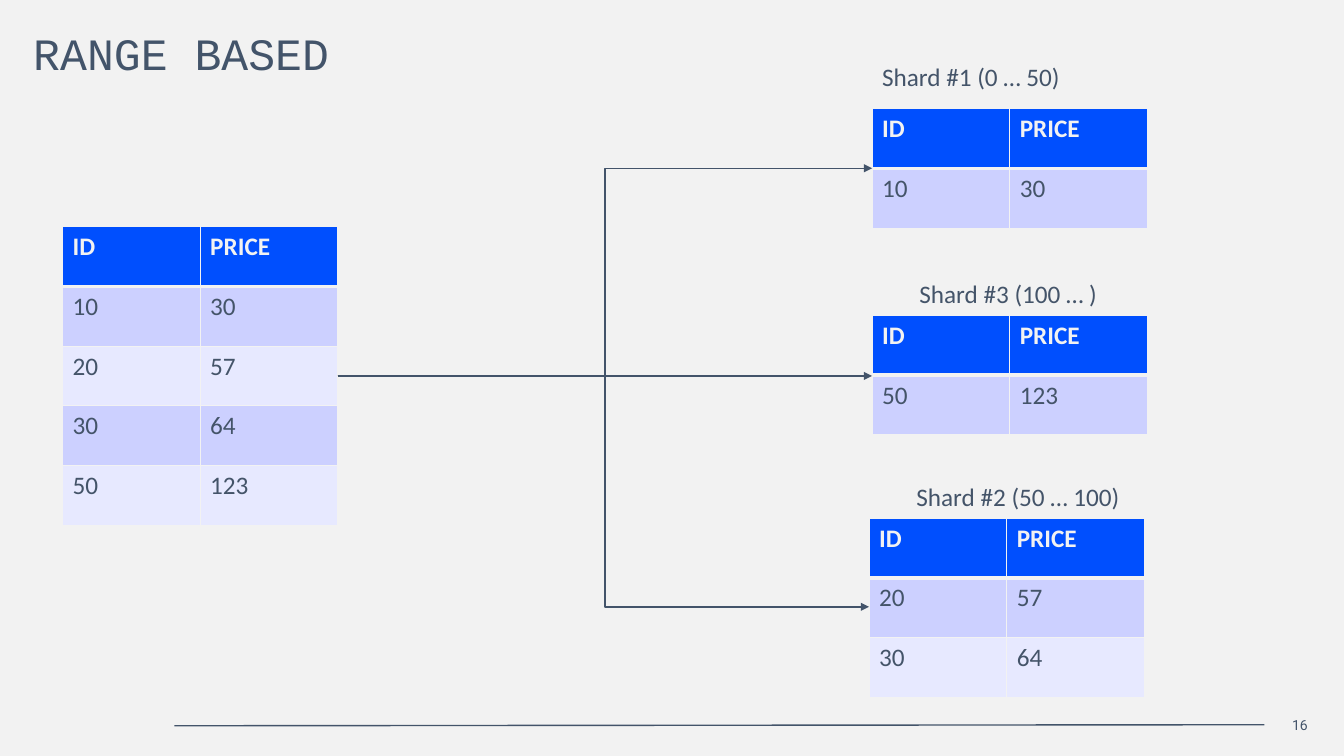
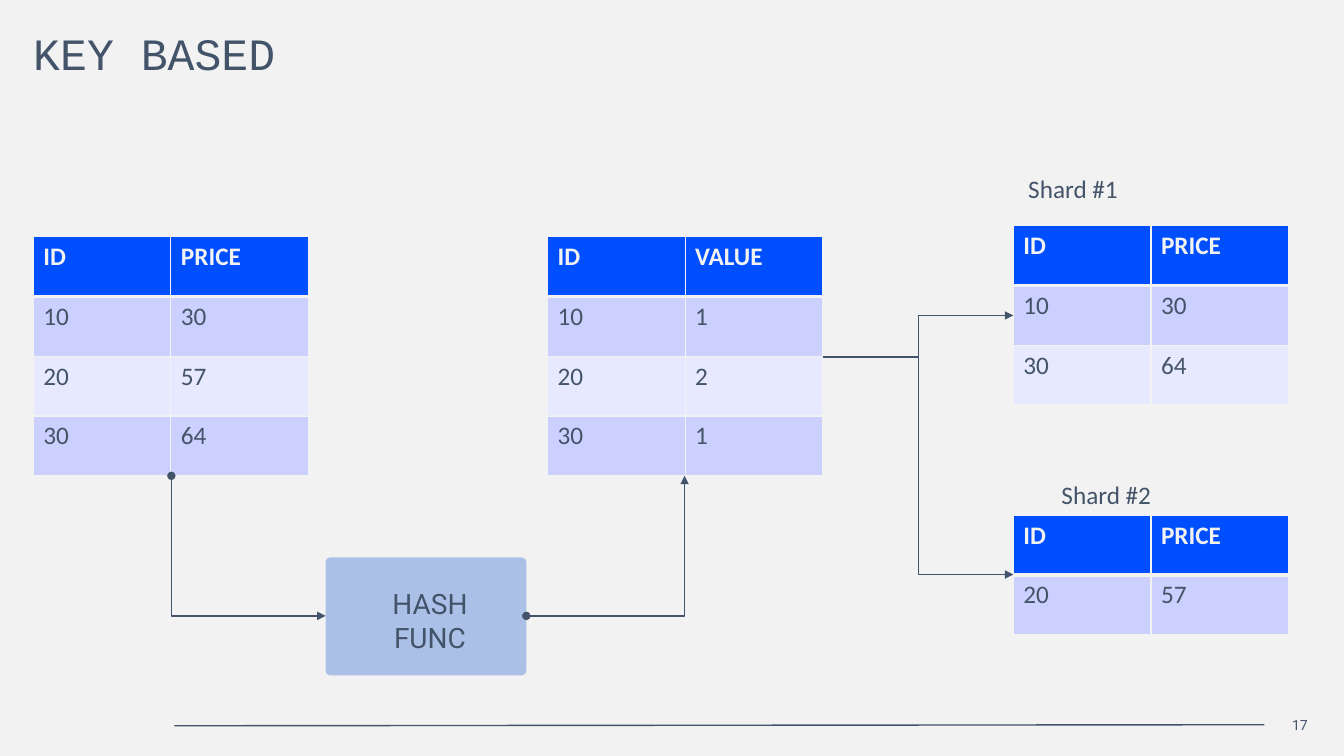
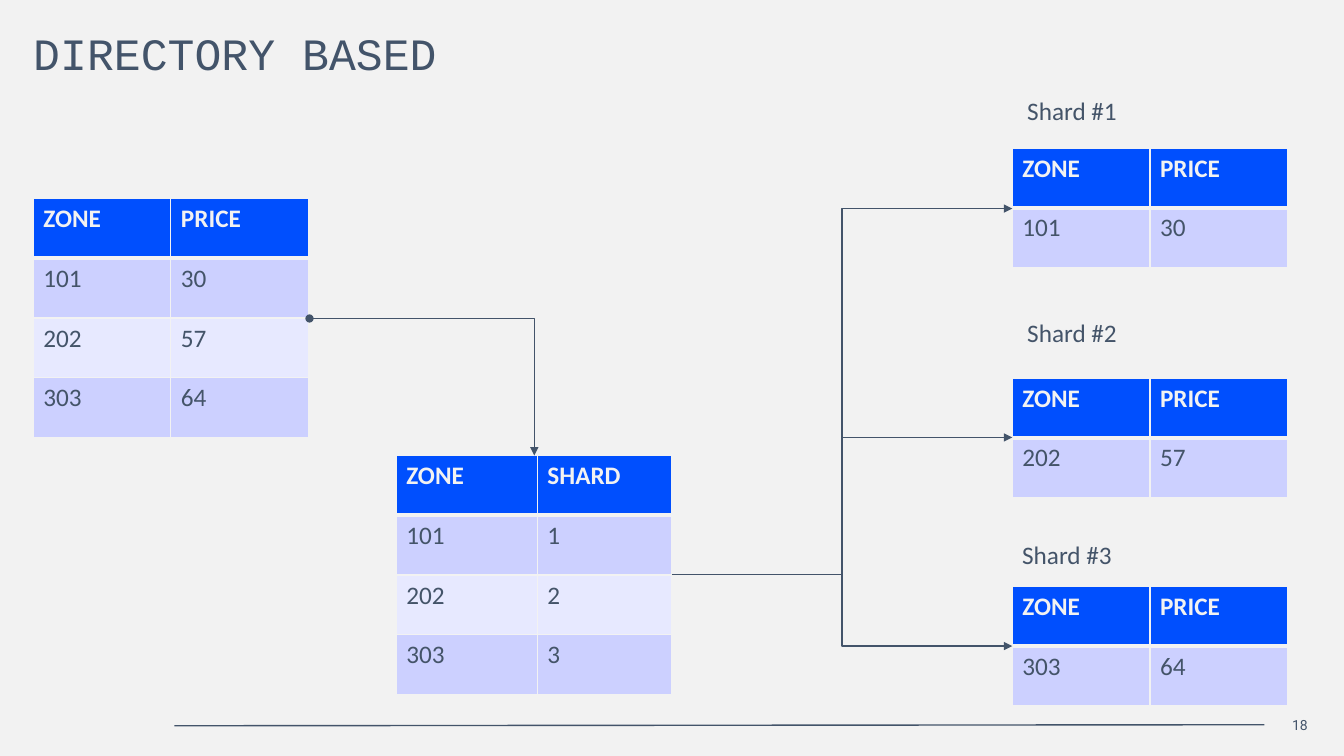
from lxml import etree
from pptx import Presentation
from pptx.dml.color import RGBColor
from pptx.enum.shapes import MSO_CONNECTOR as LINK, MSO_SHAPE
from pptx.enum.text import MSO_ANCHOR as ANCHOR, MSO_AUTO_SIZE as FIT, PP_ALIGN as ALIGN
from pptx.oxml.ns import qn
from pptx.util import Inches, Pt

PAPER, INK, BODY_INK = "F2F2F2", "43546A", "445469"
HEADER, BANDS, BOX_FILL = "004FFE", ("CCD0FF", "E7E9FF"), "AAC0E6"
MONO, SANS, TABLE_FONT = "Courier New", "Roboto", "Calibri"
TABLE_WIDTH, ROW_HEIGHT = 2.73, 2.37 / 4


def color(hex_text):
    return RGBColor.from_string(hex_text)


def set_border(cell, side, points):
    props = cell._tc.get_or_add_tcPr()
    line = etree.SubElement(props, qn("a:ln" + side), w=str(Pt(points)))
    fill = etree.SubElement(line, qn("a:solidFill"))
    etree.SubElement(fill, qn("a:srgbClr"), val=PAPER)


class ShardDeck:
    """Holds the style and the current slide."""

    def __init__(self):
        self.deck = Presentation()
        self.deck.slide_width, self.deck.slide_height = Inches(13.33), Inches(7.5)
        self.page = None

    def start_page(self, title, number):
        self.page = self.deck.slides.add_slide(self.deck.slide_layouts[6])
        fill = self.page.background.fill
        fill.solid()
        fill.fore_color.rgb = color(PAPER)
        self.text(str(number), 12.54, 7.1, 0.43, 0.19, SANS, 10,
                  align=ALIGN.RIGHT, anchor=ANCHOR.MIDDLE)
        self.connector(LINK.STRAIGHT, (1.73, 7.2), (12.54, 7.19))
        self.text(title, 0.33, 0.26, 10.53, 0.54, MONO, 32, after=6)

    def add_text(self, frame, text, font, size, ink=INK, bold=False, align=None, after=None):
        para = frame.paragraphs[0]
        para.alignment = align
        if after:
            para.space_after = Pt(after)
        span = para.add_run()
        span.text = text
        span.font.name, span.font.size, span.font.bold = font, Pt(size), bold
        span.font.color.rgb = color(ink)

    def set_insets(self, frame, left=0, top=0, right=0, bottom=0):
        frame.margin_left, frame.margin_top = Inches(left), Inches(top)
        frame.margin_right, frame.margin_bottom = Inches(right), Inches(bottom)

    def text(self, text, left, top, width, height, font, size,
             anchor=ANCHOR.TOP, **style):
        box = self.page.shapes.add_textbox(*map(Inches, (left, top, width, height)))
        frame = box.text_frame
        frame.word_wrap = True
        frame.vertical_anchor = anchor
        self.set_insets(frame)
        self.add_text(frame, text, font, size, **style)

    def label(self, text, left, top, width=1.1):
        box = self.page.shapes.add_textbox(*map(Inches, (left, top, width, 0.4)))
        frame = box.text_frame
        frame.word_wrap = False
        frame.auto_size = FIT.SHAPE_TO_FIT_TEXT
        self.add_text(frame, text, TABLE_FONT, 18, BODY_INK)

    def table(self, left, top, header, *records, widths=(TABLE_WIDTH / 2,) * 2):
        rows = [header, *records]
        height = ROW_HEIGHT * len(rows)
        table = self.page.shapes.add_table(
            len(rows), len(header), *map(Inches, (left, top, TABLE_WIDTH, height))).table
        for column, width in zip(table.columns, widths):
            column.width = Inches(width)
        for r, values in enumerate(rows):
            table.rows[r].height = Inches(ROW_HEIGHT)
            for c, value in enumerate(values):
                self.fill_cell(table.cell(r, c), r, value)

    def fill_cell(self, cell, row, value):
        is_header = row == 0
        edges = {"L": 1, "R": 1, "T": 3 if row == 1 else 1, "B": 3 if is_header else 1}
        for side, points in edges.items():
            set_border(cell, side, points)
        cell.fill.solid()
        cell.fill.fore_color.rgb = color(HEADER if is_header else BANDS[(row - 1) % 2])
        self.add_text(cell.text_frame, str(value), TABLE_FONT, 18,
                      PAPER if is_header else BODY_INK, is_header)

    def process(self, text, left, top, width, height):
        box = self.page.shapes.add_shape(
            MSO_SHAPE.ROUNDED_RECTANGLE, *map(Inches, (left, top, width, height)))
        box.adjustments[0] = 0.04
        box.shadow.inherit = False
        box.fill.solid()
        box.fill.fore_color.rgb = color(BOX_FILL)
        box.line.fill.background()
        frame = box.text_frame
        frame.word_wrap = True
        frame.vertical_anchor = ANCHOR.TOP
        self.set_insets(frame, 0.28, 0.28, 0.2, 0.12)
        self.add_text(frame, text, SANS, 20, align=ALIGN.CENTER, after=6)

    def connector(self, kind, start, end, head=None, tail=None):
        link = self.page.shapes.add_connector(kind, *map(Inches, (*start, *end)))
        link.line.color.rgb = color(INK)
        link.line.width = Pt(1)
        line = link.line._get_or_add_ln()
        for tag, shape in (("a:headEnd", head), ("a:tailEnd", tail)):
            if shape:
                etree.SubElement(line, qn(tag), type=shape)
        etree.SubElement(link._element.spPr, qn("a:effectLst"))
        return link

    def fan(self, start, trunk, *ends):
        """Arrows from one point that branch off a vertical trunk."""
        for end in ends:
            link = self.connector(LINK.ELBOW, start, end, tail="triangle")
            share = (trunk - start[0]) / (end[0] - start[0])
            guides = link._element.spPr.find(qn("a:prstGeom")).get_or_add_avLst()
            etree.SubElement(guides, qn("a:gd"), name="adj1",
                             fmla=f"val {round(share * 100000)}")

    def corner(self, start, end, down_first=False):
        """An arrow with one bend; down_first leads down, then right."""
        if down_first:
            (x1, y1), (x2, y2) = start, end
            mid_x, mid_y = (x1 + x2) / 2, (y1 + y2) / 2
            half_w, half_h = (y2 - y1) / 2, (x2 - x1) / 2
            start = mid_x + half_w, mid_y - half_h
            end = mid_x - half_w, mid_y + half_h
        link = self.connector(LINK.ELBOW, start, end, "oval", "triangle")
        props = link._element.spPr
        props.find(qn("a:prstGeom")).set("prst", "bentConnector2")
        if down_first:
            props.find(qn("a:xfrm")).set("rot", str(270 * 60000))


def range_based(show):
    show.start_page("RANGE BASED", 16)
    header = "ID", "PRICE"
    show.table(0.62, 2.25, header, (10, 30), (20, 57), (30, 64), (50, 123))
    show.table(8.65, 1.08, header, (10, 30))
    show.table(8.62, 5.14, header, (20, 57), (30, 64))
    show.table(8.65, 3.13, header, (50, 123))
    show.label("Shard #1 (0 … 50)", 8.65, 0.56, 1.99)
    show.label("Shard #2 (50 … 100)", 8.99, 4.73, 2.24)
    show.label("Shard #3 (100 … )", 9.02, 2.71, 1.99)
    show.fan((3.35, 3.73), 6, (8.65, 1.67), (8.62, 6.02), (8.65, 3.73))


def key_based(show):
    show.start_page("KEY BASED", 17)
    header = "ID", "PRICE"
    show.table(0.33, 2.35, header, (10, 30), (20, 57), (30, 64))
    show.table(10.05, 2.24, header, (10, 30), (30, 64))
    show.table(10.05, 5.11, header, (20, 57))
    show.label("Shard #1", 10.1, 1.67)
    show.label("Shard #2", 10.43, 4.71)
    show.table(5.43, 2.35, ("ID", "VALUE"), (10, 1), (20, 2), (30, 1))
    show.process("HASH FUNC", 3.23, 5.53, 1.99, 1.17)
    show.corner((1.7, 4.72), (3.23, 6.11), down_first=True)
    show.corner((5.22, 6.11), (6.79, 4.72))
    show.fan((8.16, 3.54), 9.11, (10.05, 3.13), (10.05, 5.7))


def directory_based(show):
    show.start_page("DIRECTORY BASED", 18)
    header = "ZONE", "PRICE"
    records = (101, 30), (202, 57), (303, 64)
    show.table(0.33, 1.97, header, *records)
    for top, record in zip((1.47, 3.75, 5.82), records):
        show.table(10.04, top, header, record)
    show.label("Shard #1", 10.09, 0.9)
    show.label("Shard #2", 10.09, 3.1)
    show.label("Shard #3", 10.04, 5.3)
    show.table(3.93, 4.52, ("ZONE", "SHARD"), (101, 1), (202, 2), (303, 3),
               widths=(1.4, 1.33))
    show.corner((3.07, 3.16), (5.3, 4.52))
    show.fan((6.67, 5.7), 8.35, (10.04, 2.07), (10.04, 6.41), (10.04, 4.34))


def main():
    show = ShardDeck()
    range_based(show)
    key_based(show)
    directory_based(show)
    show.deck.save("out.pptx")


if __name__ == "__main__":
    main()
